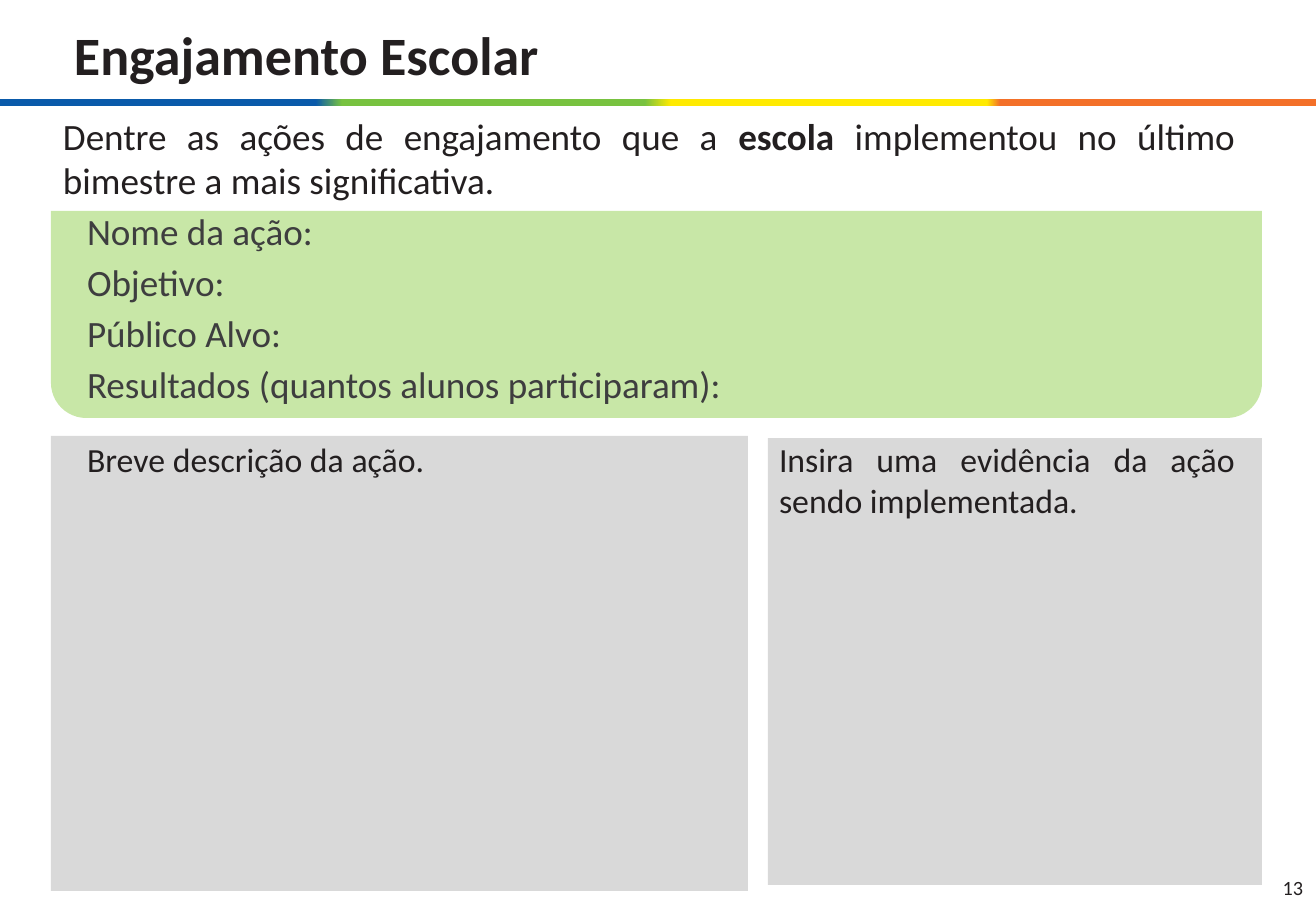
from lxml.etree import SubElement
from pptx import Presentation
from pptx.dml.color import RGBColor
from pptx.enum.shapes import MSO_SHAPE as SHAPE
from pptx.enum.text import MSO_ANCHOR as ANCHOR, PP_ALIGN as ALIGN
from pptx.oxml.ns import qn
from pptx.util import Emu, Pt

PX = 7526
SLIDE = (1316, 911)
INK, GRAY = "231F20", "D9D9D9"

STRIPE = (0, 99, 1316, 7)
STRIPE_STOPS = [
    (0, "0A5AAA"), (24, "0A5AAA"), (26, "78C240"), (49, "78C240"),
    (51, "FFEA01"), (75, "FFEA01"), (76, "F37029"), (100, "F37029"),
]
PANELS = [
    (SHAPE.RECTANGLE, (768, 438, 494, 447), GRAY, 100),
    (SHAPE.ROUND_2_SAME_RECTANGLE, (51, 211, 1211, 207), "92D050", 50),
    (SHAPE.RECTANGLE, (51, 436, 697, 455), GRAY, 100),
]
INSETS = (12, 6, 12, 6)
TEXTS = [
    dict(at=(50, 6, 1028, 96), insets=(24, 6, 12, 6), size=32, bold=True,
         anchor=ANCHOR.MIDDLE, lines=[["Engajamento Escolar"]]),
    dict(at=(1232, 864, 83, 47), size=12, anchor=ANCHOR.MIDDLE,
         align=ALIGN.RIGHT, lines=[["13"]]),
    dict(at=(75, 202, 1196, 207), size=22, color="3E3E3F", lines=[
        ["Nome da ação:"],
        ["Objetivo:"],
        ["Público Alvo:"],
        ["Resultados (quantos alunos participaram):"],
    ]),
    dict(at=(51, 107, 1196, 96), size=22, align=ALIGN.JUSTIFY, lines=[[
        "Dentre as ações de engajamento que a ", "escola ",
        "implementou no último bimestre a mais significativa.",
    ]]),
    dict(at=(767, 433, 480, 445), size=20, align=ALIGN.JUSTIFY,
         lines=[["Insira uma evidência da ação sendo implementada."]]),
    dict(at=(72, 424, 677, 462), insets=(15, 15, 15, 5), size=20,
         lines=[["Breve descrição da ação."]]),
]


def px(lengths):
    return [Emu(length * PX) for length in lengths]


def rgb(value):
    return RGBColor.from_string(value)


def add_panel(slide, outline, at):
    panel = slide.shapes.add_shape(outline, *px(at))
    panel.shadow.inherit = False
    panel.line.fill.background()
    return panel


def add_stripe(slide):
    stripe = add_panel(slide, SHAPE.RECTANGLE, STRIPE)
    stripe.fill.gradient()
    stripe.fill.gradient_angle = 0
    stops = stripe.fill._fill._gradFill.find(qn("a:gsLst"))
    stops.clear()
    for percent, color in STRIPE_STOPS:
        stop = SubElement(stops, qn("a:gs"), pos=str(percent * 1000))
        SubElement(stop, qn("a:srgbClr"), val=color)


def add_filled_panel(slide, outline, at, color, opacity):
    panel = add_panel(slide, outline, at)
    panel.fill.solid()
    panel.fill.fore_color.rgb = rgb(color)
    if outline == SHAPE.ROUND_2_SAME_RECTANGLE:
        panel.adjustments[0], panel.adjustments[1] = 0, 0.17
    if opacity < 100:
        tint = panel.fill._xPr.find(".//" + qn("a:srgbClr"))
        SubElement(tint, qn("a:alpha"), val=str(opacity * 1000))


def add_text(slide, at, size, lines, insets=INSETS, color=INK, bold=False,
             anchor=ANCHOR.TOP, align=ALIGN.LEFT):
    frame = slide.shapes.add_textbox(*px(at)).text_frame
    left, top, right, bottom = px(insets)
    frame_format = dict(word_wrap=True, vertical_anchor=anchor, margin_left=left,
                        margin_top=top, margin_right=right, margin_bottom=bottom)
    for name, value in frame_format.items():
        setattr(frame, name, value)
    for row, pieces in enumerate(lines):
        line = frame.add_paragraph() if row else frame.paragraphs[0]
        line.alignment = align
        line.space_before = Pt(4 if row else 0)
        for order, words in enumerate(pieces):
            run = line.add_run()
            run.text = words
            font_format = dict(name="Calibri", size=Pt(size), bold=bold or order == 1)
            for name, value in font_format.items():
                setattr(run.font, name, value)
            run.font.color.rgb = rgb(color)


def main():
    """Build the school engagement slide."""
    deck = Presentation()
    deck.slide_width, deck.slide_height = px(SLIDE)
    slide = deck.slides.add_slide(deck.slide_layouts[6])
    add_stripe(slide)
    for panel in PANELS:
        add_filled_panel(slide, *panel)
    for text in TEXTS:
        add_text(slide, **text)
    deck.save("out.pptx")


if __name__ == "__main__":
    main()
